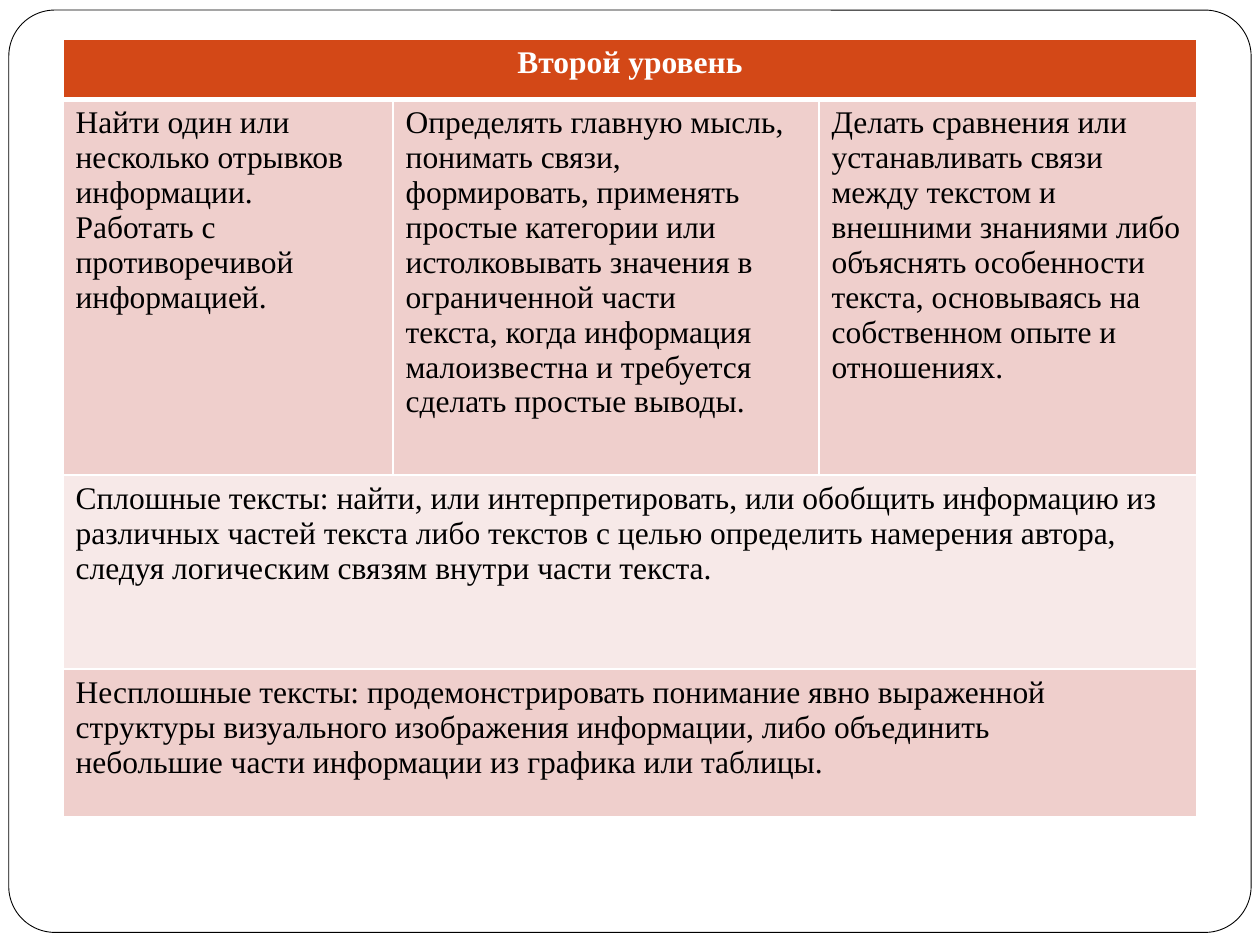
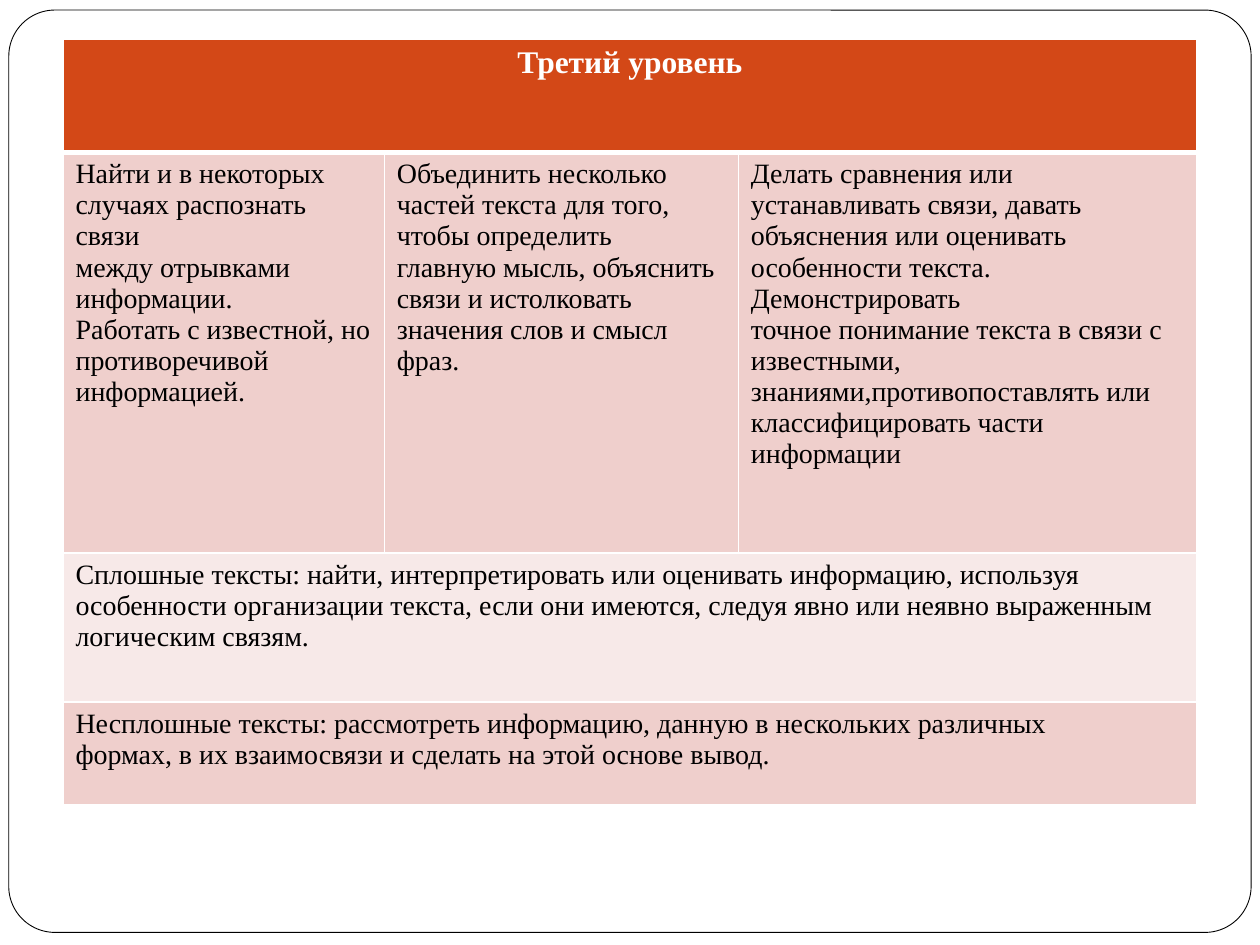
from lxml.etree import SubElement
from pptx import Presentation
from pptx.dml.color import RGBColor
from pptx.enum.shapes import MSO_SHAPE as Shape
from pptx.enum.text import PP_ALIGN as Align
from pptx.oxml.ns import qn
from pptx.util import Inches, Pt

FONT = "Times New Roman"
WHITE = RGBColor(0xFF, 0xFF, 0xFF)
BLACK = RGBColor(0, 0, 0)
RUST = RGBColor(0xD3, 0x48, 0x17)
ROSE = RGBColor(0xEF, 0xCF, 0xCC)
PALE = RGBColor(0xF7, 0xE9, 0xE8)
BANDS = [RUST, ROSE, PALE, ROSE]

LEVELS = [
    dict(
        size=18,
        cols=[2.62, 3.38, 3],
        rows=[0.48, 2.98, 1.54, 1.17],
        head="Второй уровень",
        skills=[
            ["Найти один или несколько отрывков информации.",
             "Работать с противоречивой",
             "информацией."],
            ["Определять главную мысль, понимать связи, формировать, применять",
             "простые категории или",
             "истолковывать значения в",
             "ограниченной части",
             "текста, когда информация",
             "малоизвестна и требуется",
             "сделать простые выводы."],
            ["Делать сравнения или",
             "устанавливать связи",
             "между текстом и",
             "внешними знаниями либо",
             "объяснять особенности",
             "текста, основываясь на",
             "собственном опыте и",
             "отношениях."],
        ],
        texts=[
            ["Сплошные тексты: найти, или интерпретировать, или обобщить информацию из",
             "различных частей текста либо текстов с целью определить намерения автора, "
             "следуя логическим связям внутри части текста."],
            ["Несплошные тексты: продемонстрировать понимание явно выраженной "
             "структуры визуального изображения информации, либо объединить",
             "небольшие части информации из графика или таблицы."],
        ],
    ),
    dict(
        size=16,
        cols=[2.55, 2.81, 3.64],
        rows=[0.9, 3.18, 1.18, 0.82],
        head="Третий уровень",
        skills=[
            ["Найти и в некоторых",
             "случаях распознать связи",
             "между отрывками",
             "информации.",
             "Работать с известной, но",
             "противоречивой",
             "информацией."],
            ["Объединить несколько",
             "частей текста для того,",
             "чтобы определить",
             "главную мысль, объяснить",
             "связи и истолковать",
             "значения слов и смысл",
             "фраз."],
            ["Делать сравнения или устанавливать связи, давать объяснения "
             "или оценивать особенности текста. Демонстрировать",
             "точное понимание текста в связи с известными, "
             "знаниями,противопоставлять или классифицировать части",
             "информации"],
        ],
        texts=[
            ["Сплошные тексты: найти, интерпретировать или оценивать информацию, "
             "используя особенности организации текста, если они имеются, "
             "следуя явно или неявно выраженным логическим связям."],
            ["Несплошные тексты: рассмотреть информацию, данную в нескольких различных",
             "формах, в их взаимосвязи и сделать на этой основе вывод."],
        ],
    ),
]


def write(frame, lines, size=18, color=BLACK, bold=False, align=Align.LEFT):
    """Fill a text frame with one paragraph per line."""
    frame.text = "\n".join(lines)
    for para in frame.paragraphs:
        para.alignment = align
        for run in para.runs:
            font = run.font
            font.name, font.size, font.bold = FONT, Pt(size), bold
            font.color.rgb = color


def edge(cell, **widths):
    """Draw white cell borders, one point wide unless a side is given."""
    props = cell._tc.get_or_add_tcPr()
    for side in "LRTB":
        line = SubElement(props, qn(f"a:ln{side}"), w=str(Pt(widths.get(side, 1))))
        fill = SubElement(line, qn("a:solidFill"))
        SubElement(fill, qn("a:srgbClr"), val=str(WHITE))


def add_frame(slide):
    """Draw the thin rounded frame around the slide."""
    frame = slide.shapes.add_shape(
        Shape.ROUNDED_RECTANGLE, Inches(0.07), Inches(0.08), Inches(9.86), Inches(7.32))
    frame.adjustments[0] = 0.05
    frame.shadow.inherit = False
    frame.fill.solid()
    frame.fill.fore_color.rgb = WHITE
    frame.line.color.rgb = BLACK
    frame.line.width = Pt(0.5)


def add_grid(slide, cols, rows):
    """Add a banded table whose rows are merged except the skills row."""
    table = slide.shapes.add_table(
        len(rows), len(cols), Inches(0.5), Inches(0.31),
        Inches(sum(cols)), Inches(sum(rows))).table
    for col, width in zip(table.columns, cols):
        col.width = Inches(width)
    for i, (row, height) in enumerate(zip(table.rows, rows)):
        row.height = Inches(height)
        for cell in row.cells:
            edge(cell, B=3 if i == 0 else 1, T=3 if i == 1 else 1)
            cell.fill.solid()
            cell.fill.fore_color.rgb = BANDS[i]
        if i != 1:
            table.cell(i, 0).merge(table.cell(i, len(cols) - 1))
    return table


def add_level(deck, size, cols, rows, head, skills, texts):
    """Build the slide of one reading level."""
    slide = deck.slides.add_slide(deck.slide_layouts[6])
    add_frame(slide)
    table = add_grid(slide, cols, rows)
    write(table.cell(0, 0).text_frame, [head], color=WHITE, bold=True, align=Align.CENTER)
    for col, lines in enumerate(skills):
        write(table.cell(1, col).text_frame, lines, size=size)
    for row, lines in enumerate(texts, 2):
        write(table.cell(row, 0).text_frame, lines, size=size)


def main():
    """Build and save the deck."""
    deck = Presentation()
    deck.slide_width, deck.slide_height = Inches(10), Inches(7.5)
    for level in LEVELS:
        add_level(deck, **level)
    deck.save("out.pptx")


if __name__ == "__main__":
    main()
